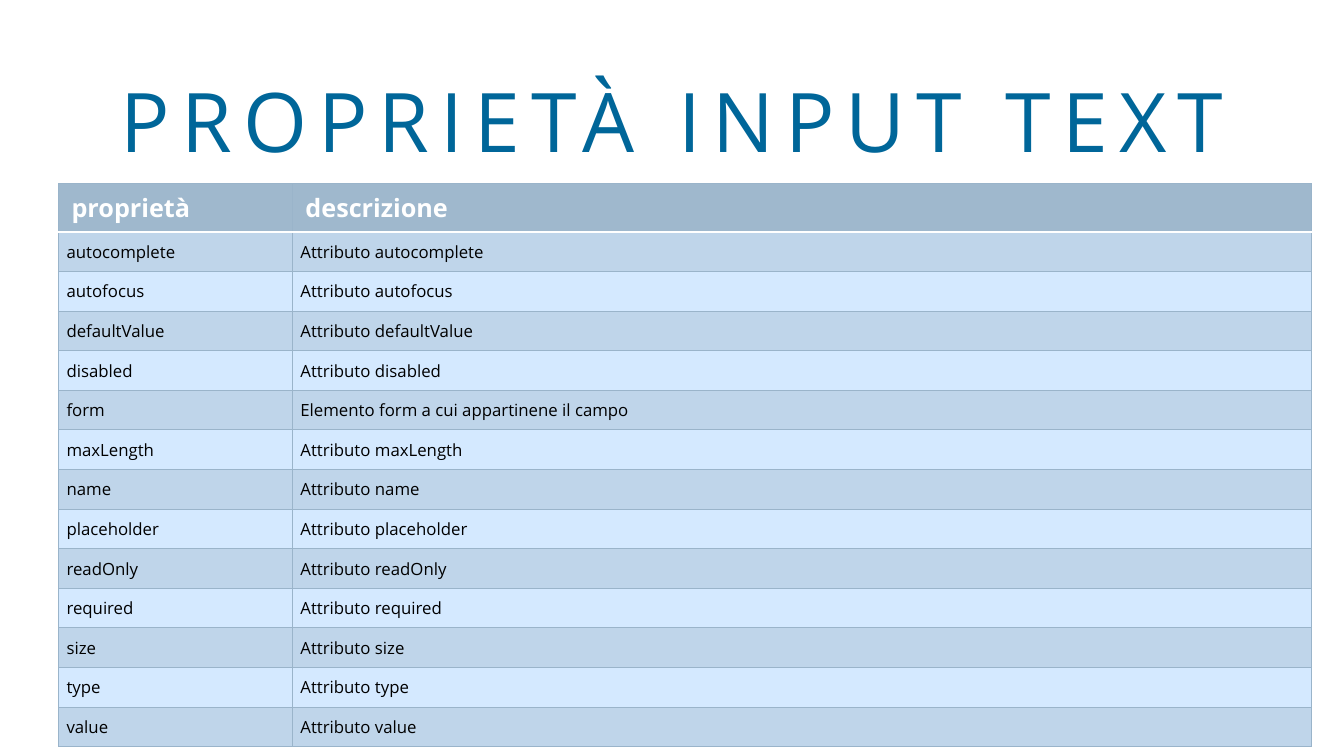
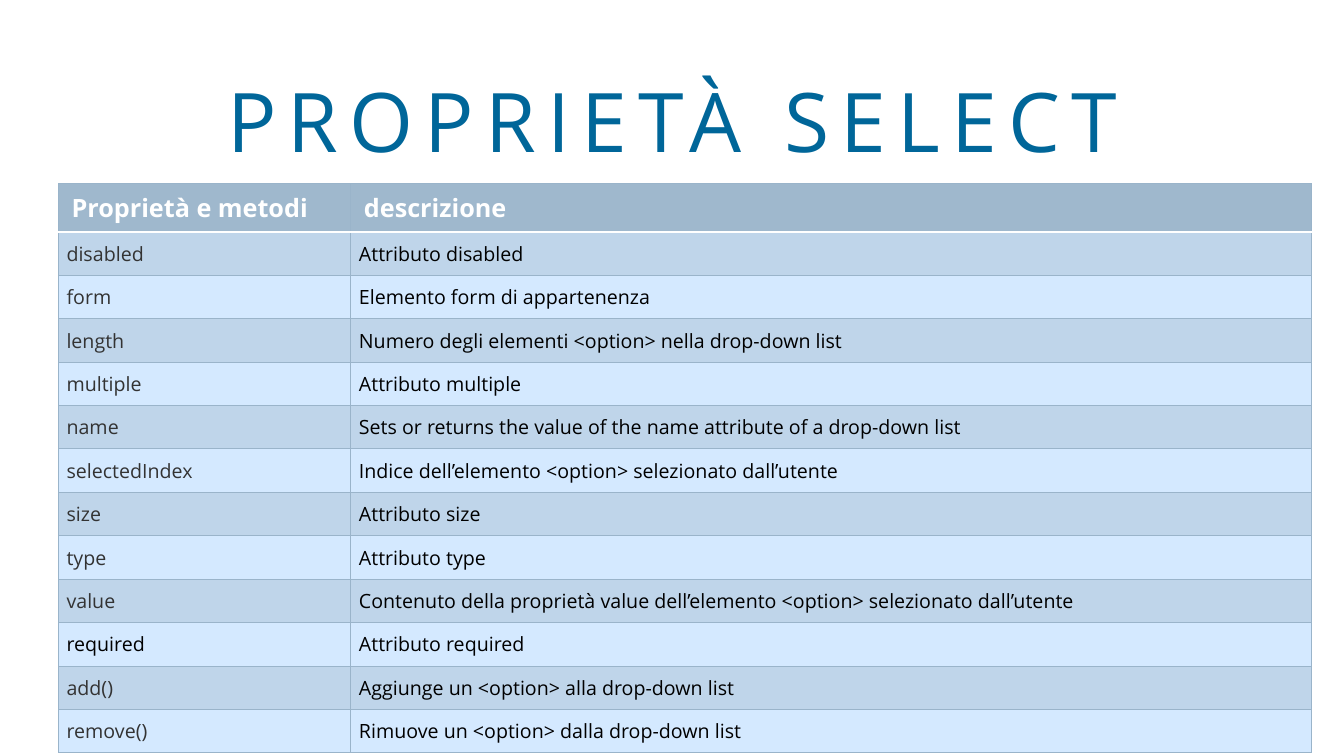
"""Builds two slides listing the properties of the input text and select form elements."""
from lxml.etree import SubElement
from pptx import Presentation
from pptx.dml.color import RGBColor
from pptx.enum.text import MSO_ANCHOR, MSO_AUTO_SIZE, PP_ALIGN
from pptx.oxml.ns import qn
from pptx.util import Inches, Pt

FONT = "Open Sans"
COLORS = {
    "title": "006699", "header": "9FB8CD", "header_text": "FFFFFF",
    "band_dark": "BFD5EA", "band_light": "D4E9FF", "border": "9AB4CA",
    "rule": "FFFFFF", "text": "000000", "muted": "333333",
}
TABLE_LEFT, TABLE_TOP, TABLE_WIDTH, HEADER_HEIGHT = 0.58, 1.82, 12.43, 0.48

SLIDES = [
    {
        "title": "PROPRIETÀ INPUT TEXT",
        "header": ("proprietà", "descrizione"),
        "rows": [
            ("autocomplete", "Attributo autocomplete"),
            ("autofocus", "Attributo autofocus"),
            ("defaultValue", "Attributo defaultValue"),
            ("disabled", "Attributo disabled"),
            ("form", "Elemento form a cui appartinene il campo"),
            ("maxLength", "Attributo maxLength"),
            ("name", "Attributo name"),
            ("placeholder", "Attributo placeholder"),
            ("readOnly", "Attributo readOnly"),
            ("required", "Attributo required"),
            ("size", "Attributo size"),
            ("type", "Attributo type"),
            ("value", "Attributo value"),
        ],
        "key_width": 2.32, "bottom": 7.41, "size": 12,
        "key_color": "text", "black_keys": (),
    },
    {
        "title": "PROPRIETÀ SELECT",
        "header": ("Proprietà e metodi", "descrizione"),
        "rows": [
            ("disabled", "Attributo disabled"),
            ("form", "Elemento form di appartenenza"),
            ("length", "Numero degli elementi <option> nella drop-down list"),
            ("multiple", "Attributo multiple"),
            ("name", "Sets or returns the value of the name attribute of a drop-down list"),
            ("selectedIndex", "Indice dell’elemento <option> selezionato dall’utente"),
            ("size", "Attributo size"),
            ("type", "Attributo type"),
            ("value", "Contenuto della proprietà value dell’elemento <option> selezionato dall’utente"),
            ("required", "Attributo required"),
            ("add()", "Aggiunge un <option> alla drop-down list"),
            ("remove()", "Rimuove un <option> dalla drop-down list"),
        ],
        "key_width": 2.9, "bottom": 7.47, "size": 14,
        "key_color": "muted", "black_keys": ("required",),
    },
]


def write_text(frame, text, size, color, bold=False, align=PP_ALIGN.LEFT, spacing=None):
    paragraph = frame.paragraphs[0]
    paragraph.alignment = align
    run = paragraph.add_run()
    run.text = text
    run.font.name = FONT
    run.font.size = Pt(size)
    run.font.bold = bold
    run.font.color.rgb = RGBColor.from_string(COLORS[color])
    if spacing:
        run.font._element.set("spc", str(spacing * 100))


def add_border(cell, side, color, width):
    line = SubElement(cell._tc.get_or_add_tcPr(), qn(f"a:ln{side}"), w=str(Pt(width)))
    fill = SubElement(line, qn("a:solidFill"))
    SubElement(fill, qn("a:srgbClr"), val=COLORS[color])


def format_cell(cell, fill, margin_x, margin_y, rule_side):
    cell.margin_left = cell.margin_right = Inches(margin_x)
    cell.margin_top = cell.margin_bottom = Inches(margin_y)
    cell.vertical_anchor = MSO_ANCHOR.MIDDLE
    for side in "LRTB":
        color, width = ("rule", 2) if side == rule_side else ("border", 0.75)
        add_border(cell, side, color, width)
    cell.fill.solid()
    cell.fill.fore_color.rgb = RGBColor.from_string(COLORS[fill])


def add_title(slide, text):
    title = slide.shapes.title
    title.left, title.top = Inches(0.67), Inches(0.83)
    title.width, title.height = Inches(12), Inches(0.71)
    frame = title.text_frame
    frame.margin_left = frame.margin_right = frame.margin_top = frame.margin_bottom = 0
    frame.word_wrap = True
    frame.auto_size = MSO_AUTO_SIZE.NONE
    frame.vertical_anchor = MSO_ANCHOR.MIDDLE
    write_text(frame, text, 58.7, "title", align=PP_ALIGN.CENTER, spacing=8)


def add_property_table(slide, content):
    rows = [content["header"], *content["rows"]]
    height = content["bottom"] - TABLE_TOP
    row_height = (height - HEADER_HEIGHT) / len(content["rows"])
    table = slide.shapes.add_table(
        len(rows), 2, Inches(TABLE_LEFT), Inches(TABLE_TOP), Inches(TABLE_WIDTH), Inches(height)
    ).table
    table.horz_banding = False
    table.columns[0].width = Inches(content["key_width"])
    table.columns[1].width = Inches(TABLE_WIDTH - content["key_width"])
    for index, row in enumerate(rows):
        table.rows[index].height = Inches(row_height if index else HEADER_HEIGHT)
        for column, text in enumerate(row):
            cell = table.cell(index, column)
            if index == 0:
                format_cell(cell, "header", 0.13, 0.06, "B")
                write_text(cell.text_frame, text, 18, "header_text", bold=True)
                continue
            band = "band_dark" if index % 2 else "band_light"
            format_cell(cell, band, 0.08, 0.08, "T" if index == 1 else None)
            is_muted = column == 0 and text not in content["black_keys"]
            color = content["key_color"] if is_muted else "text"
            write_text(cell.text_frame, text, content["size"], color)


def main():
    presentation = Presentation()
    presentation.slide_width, presentation.slide_height = Inches(13.33), Inches(7.5)
    for content in SLIDES:
        slide = presentation.slides.add_slide(presentation.slide_layouts[5])
        add_title(slide, content["title"])
        add_property_table(slide, content)
    presentation.save("out.pptx")


if __name__ == "__main__":
    main()
